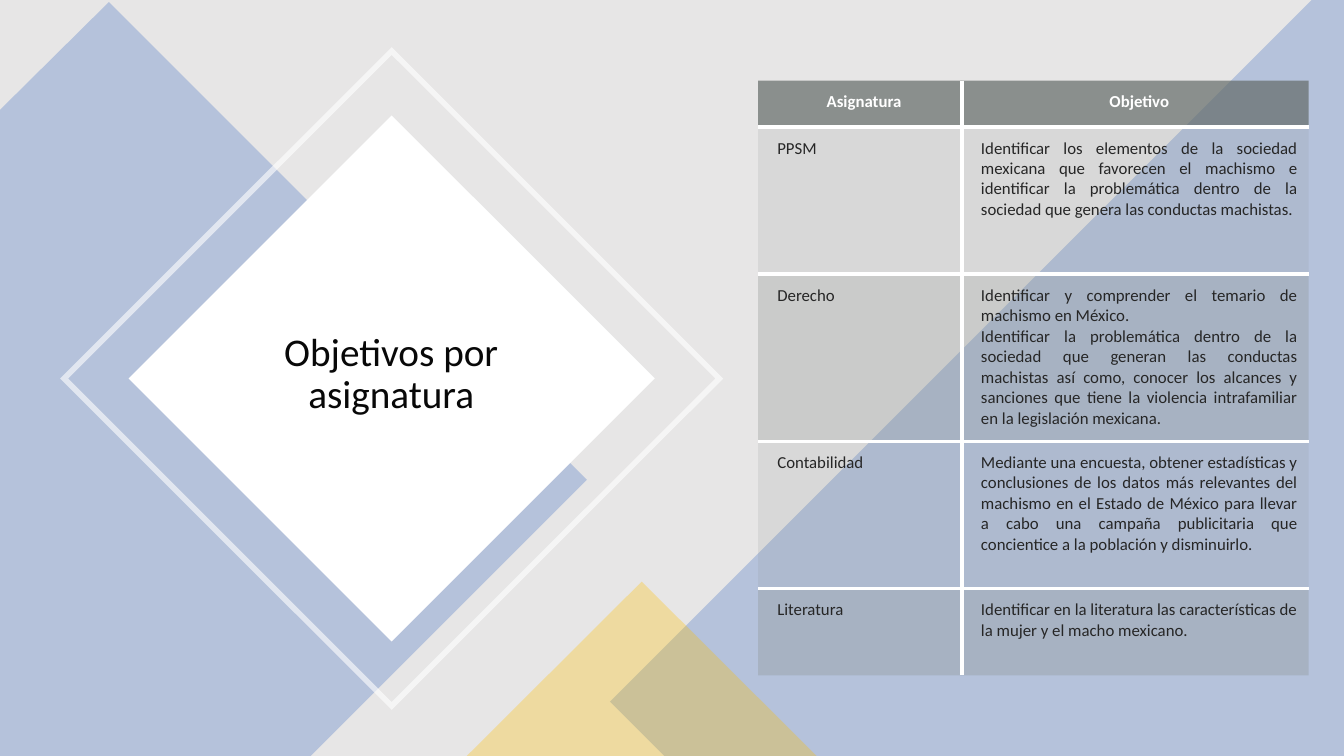
from lxml import etree
from pptx import Presentation
from pptx.dml.color import RGBColor
from pptx.enum import shapes, text
from pptx.oxml.ns import qn
from pptx.util import Inches, Pt

GRAY = RGBColor(0xE7, 0xE6, 0xE6)
BLUE = RGBColor(0x44, 0x72, 0xC4)
GOLD = RGBColor(0xFF, 0xC0, 0x00)
WHITE = RGBColor(0xFF, 0xFF, 0xFF)
INK = RGBColor(0x08, 0x08, 0x08)
BODY = RGBColor(0x26, 0x26, 0x26)
HEADER = RGBColor(0x63, 0x6B, 0x68)
BAND = RGBColor(0x87, 0x8E, 0x8B)
FONT = "Calibri"
SHAPE = shapes.MSO_SHAPE
LEFT, CENTER, JUSTIFY = (
    text.PP_ALIGN.LEFT, text.PP_ALIGN.CENTER, text.PP_ALIGN.JUSTIFY)

LEFT_BAND = [(1.08, 0.02), (5.82, 4.76), (3.08, 7.5), (0, 7.5), (0, 1.09)]
RIGHT_BAND = [(13.01, 0), (13.34, 0), (13.34, 7.5), (6.59, 7.5), (6.05, 6.96)]

COL_WIDTHS = [2.02, 3.44]
ROW_HEIGHTS = [0.46, 1.46, 1.66, 1.46, 0.86]
OBJECTIVES = [
    ("Asignatura", ["Objetivo"], CENTER),
    ("PPSM", [
        "Identificar los elementos de la sociedad mexicana que favorecen el "
        "machismo e identificar la problemática dentro de la sociedad que "
        "genera las conductas machistas."], JUSTIFY),
    ("Derecho", [
        "Identificar y comprender el temario de machismo en México.",
        "Identificar la problemática dentro de la sociedad que generan las "
        "conductas machistas así como, conocer los alcances y sanciones que "
        "tiene la violencia intrafamiliar en la legislación mexicana."],
     JUSTIFY),
    ("Contabilidad", [
        "Mediante una encuesta, obtener estadísticas y conclusiones de los "
        "datos más relevantes del machismo en el Estado de México para llevar "
        "a cabo una campaña publicitaria que concientice a la población y "
        "disminuirlo."], JUSTIFY),
    ("Literatura", [
        "Identificar en la literatura las características de la mujer y el "
        "macho mexicano."], LEFT),
]


def paint(fill, element, color, opacity):
    fill.solid()
    fill.fore_color.rgb = color
    if opacity < 100:
        clr = next(element.iter(qn("a:srgbClr")))
        etree.SubElement(clr, qn("a:alpha"), val=str(opacity * 1000))


def finish(sp, color, opacity):
    paint(sp.fill, sp._element.spPr, color, opacity)
    sp.line.fill.background()
    sp.shadow.inherit = False


def add_preset(s, kind, box, color, opacity=100, rotation=0):
    sp = s.shapes.add_shape(kind, *map(Inches, box))
    sp.rotation = rotation
    finish(sp, color, opacity)
    return sp


def add_polygon(s, points, color, opacity):
    start, *rest = [(Inches(x), Inches(y)) for x, y in points]
    builder = s.shapes.build_freeform(*start)
    builder.add_line_segments(rest, close=True)
    finish(builder.convert_to_shape(), color, opacity)


def add_run(p, words, size, color, bold=False):
    r = p.add_run()
    r.text = words
    r.font.name, r.font.size, r.font.bold = FONT, Pt(size), bold
    r.font.color.rgb = color


def add_title(s, words):
    title = s.shapes.title
    s.shapes._spTree.append(title._element)
    title.left, title.top, title.width, title.height = map(
        Inches, (1.9, 2.98, 3.96, 1.47))
    tf = title.text_frame
    tf.word_wrap = True
    tf.vertical_anchor = text.MSO_ANCHOR.MIDDLE
    p = tf.paragraphs[0]
    p.alignment, p.line_spacing = CENTER, 0.9
    add_run(p, words, 28, INK)


def set_borders(cell, visible):
    tcPr = cell._tc.get_or_add_tcPr()
    for i, (side, shown) in enumerate(visible.items()):
        ln = etree.Element(qn("a:" + side), w=str(Pt(3)))
        if shown:
            fill = etree.SubElement(ln, qn("a:solidFill"))
            etree.SubElement(fill, qn("a:srgbClr"), val=str(WHITE))
        else:
            etree.SubElement(ln, qn("a:noFill"))
        tcPr.insert(i, ln)


def fill_cell(cell, paragraphs, align, color, opacity, is_header):
    cell.margin_left = Inches(0.19)
    cell.margin_right = cell.margin_top = cell.margin_bottom = Inches(0.11)
    paint(cell.fill, cell._tc.get_or_add_tcPr(), color, opacity)
    tf = cell.text_frame
    for i, words in enumerate(paragraphs):
        p = tf.add_paragraph() if i else tf.paragraphs[0]
        p.alignment = align
        add_run(p, words, 12, WHITE if is_header else BODY, is_header)


def add_objectives(s):
    last = len(OBJECTIVES) - 1
    table = s.shapes.add_table(
        len(OBJECTIVES), 2, Inches(7.52), Inches(0.8),
        Inches(sum(COL_WIDTHS)), Inches(sum(ROW_HEIGHTS))).table
    table.first_row = table.horz_banding = False
    for col, width in zip(table.columns, COL_WIDTHS):
        col.width = Inches(width)
    for i, (subject, objective, align) in enumerate(OBJECTIVES):
        table.rows[i].height = Inches(ROW_HEIGHTS[i])
        header = i == 0
        color = HEADER if header else BAND
        opacity = 70 if header else 15 if i % 2 else 30
        columns = [([subject], CENTER if header else LEFT), (objective, align)]
        for j, (paragraphs, alignment) in enumerate(columns):
            cell = table.cell(i, j)
            fill_cell(cell, paragraphs, alignment, color, opacity, header)
            set_borders(cell, {"lnL": j == 1, "lnR": j == 0,
                               "lnT": i > 0, "lnB": i < last})


def main():
    prs = Presentation()
    prs.slide_width, prs.slide_height = Inches(13.33), Inches(7.5)
    s = prs.slides.add_slide(prs.slide_layouts[5])
    add_preset(s, SHAPE.RECTANGLE, (0, 0, 13.33, 7.5), GRAY)
    add_polygon(s, LEFT_BAND, BLUE, 30)
    add_polygon(s, RIGHT_BAND, BLUE, 30)
    add_preset(s, SHAPE.ISOSCELES_TRIANGLE, (4.63, 5.77, 3.47, 1.73), GOLD, 30)
    add_preset(s, SHAPE.RECTANGLE, (2.04, 1.91, 3.69, 3.69), WHITE, rotation=45)
    frame = add_preset(s, SHAPE.FRAME, (1.56, 1.43, 4.65, 4.65), WHITE, 60, 45)
    frame.adjustments[0] = 0.012
    add_title(s, "Objetivos por asignatura")
    add_objectives(s)
    prs.save("out.pptx")


if __name__ == "__main__":
    main()
